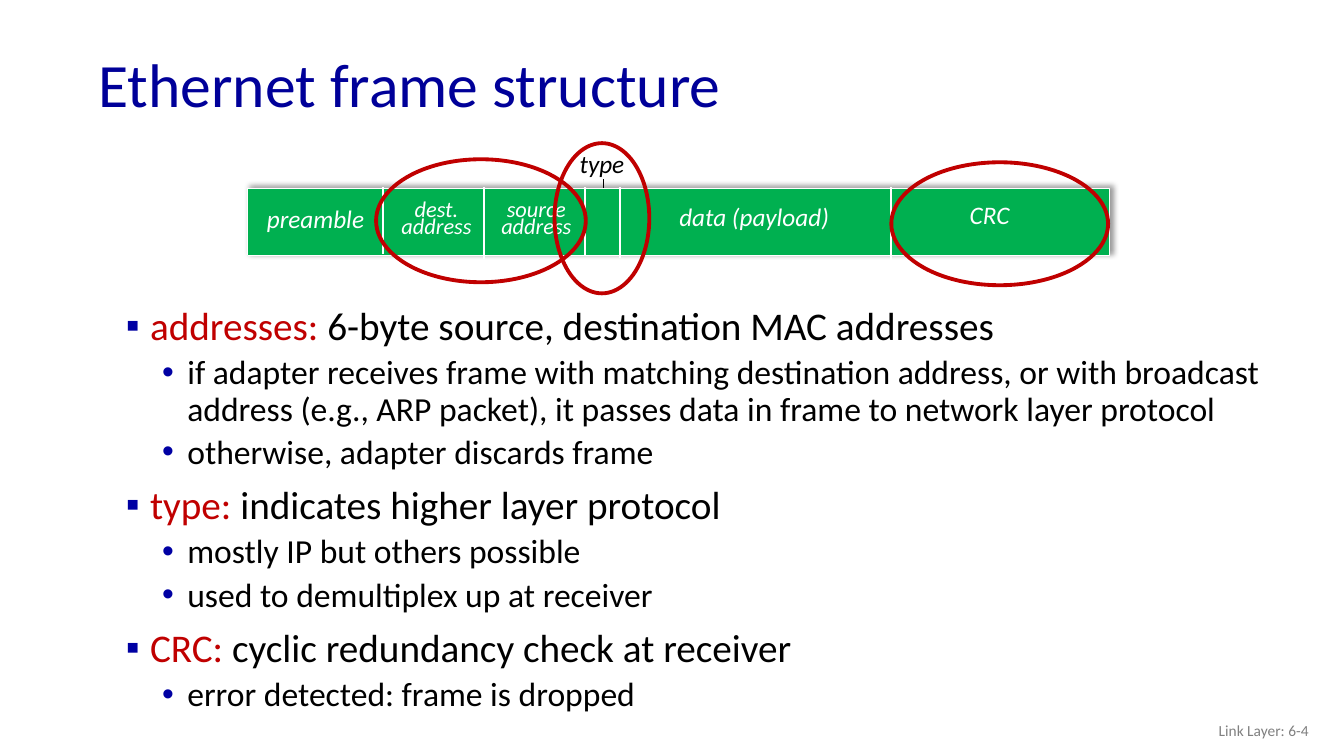
from lxml import etree
from pptx import Presentation
from pptx.dml.color import RGBColor
from pptx.enum.shapes import MSO_CONNECTOR, MSO_SHAPE
from pptx.enum.text import MSO_ANCHOR, MSO_AUTO_SIZE, PP_ALIGN
from pptx.oxml.ns import qn
from pptx.util import Inches, Pt

RECTANGLE, OVAL = MSO_SHAPE.RECTANGLE, MSO_SHAPE.OVAL
STRAIGHT = MSO_CONNECTOR.STRAIGHT
TOP, MIDDLE = MSO_ANCHOR.TOP, MSO_ANCHOR.MIDDLE
LEFT, CENTER, RIGHT = PP_ALIGN.LEFT, PP_ALIGN.CENTER, PP_ALIGN.RIGHT
GROW = MSO_AUTO_SIZE.SHAPE_TO_FIT_TEXT

NAVY = RGBColor(0x00, 0x00, 0x99)
BULLET_BLUE = RGBColor(0x00, 0x00, 0xA3)
RED = RGBColor(0xC0, 0x00, 0x00)
GREEN = RGBColor(0x00, 0xB0, 0x50)
GRAY = RGBColor(0x80, 0x80, 0x80)
WHITE = RGBColor(0xFF, 0xFF, 0xFF)
BLACK = RGBColor(0x00, 0x00, 0x00)

TOPICS = [
    ("addresses: ", "6-byte source, destination MAC addresses", [
        "if adapter receives frame with matching destination address, or with "
        "broadcast address (e.g., ARP packet), it passes data in frame to "
        "network layer protocol",
        "otherwise, adapter discards frame",
    ]),
    ("type: ", "indicates higher layer protocol", [
        "mostly IP but others possible",
        "used to demultiplex up at receiver",
    ]),
    ("CRC: ", "cyclic redundancy check at receiver", [
        "error detected: frame is dropped",
    ]),
]
FIELD_LABELS = [
    (["dest.", "address"], 16, (3.75, 1.99, 1.16, 0.4)),
    (["source", "address"], 16, (4.74, 1.99, 1.16, 0.4)),
    (["data (payload)"], 18, (6.54, 2.08, 1.88, 0.26)),
    (["CRC"], 18, (9.23, 2.06, 1.17, 0.26)),
    (["preamble"], 18, (2.4, 2.1, 1.46, 0.26)),
]
FIELD_BORDERS = [(3.8, 2.52), (4.8, 2.57), (5.8, 2.53), (6.15, 2.56), (8.84, 2.62)]
HIGHLIGHTS = [
    (3.73, 1.58, 2.08, 1.22),
    (8.84, 1.61, 2.15, 1.22),
    (5.5, 1.42, 0.94, 1.49),
]


class FrameSlide:
    font = "Calibri"

    def __init__(self, deck):
        self.slide = deck.slides.add_slide(deck.slide_layouts[6])

    def run(self, paragraph, words, size, color, italic=False):
        run = paragraph.add_run()
        run.text = words
        run.font.name = self.font
        run.font.size = Pt(size)
        run.font.italic = italic
        run.font.color.rgb = color

    def frame(self, box, anchor=TOP):
        frame = self.slide.shapes.add_textbox(*map(Inches, box)).text_frame
        frame.word_wrap = True
        frame.vertical_anchor = anchor
        return frame

    def text(self, lines, box, size, color, align=LEFT, anchor=TOP,
             spacing=None, italic=False):
        frame = self.frame(box, anchor)
        if italic:
            frame.auto_size = GROW
        for index, words in enumerate(lines):
            paragraph = frame.add_paragraph() if index else frame.paragraphs[0]
            paragraph.alignment = align
            paragraph.line_spacing = spacing
            self.run(paragraph, words, size, color, italic)

    def bullet(self, paragraph, level, symbol, margin, indent, before):
        paragraph.level = level
        paragraph.line_spacing = 0.9
        paragraph.space_before = Pt(before)
        properties = paragraph._p.get_or_add_pPr()
        properties.set("marL", str(Inches(margin)))
        properties.set("indent", str(Inches(indent)))
        bullet_color = etree.SubElement(properties, qn("a:buClr"))
        etree.SubElement(bullet_color, qn("a:srgbClr"), val=str(BULLET_BLUE))
        etree.SubElement(properties, qn("a:buFont"), typeface="Arial")
        etree.SubElement(properties, qn("a:buChar"), char=symbol)

    def outline(self, topics, box):
        frame = self.frame(box)
        for index, (term, meaning, details) in enumerate(topics):
            heading = frame.add_paragraph() if index else frame.paragraphs[0]
            self.bullet(heading, 0, "▪", 0.39, -0.24, 10)
            self.run(heading, term, 28, RED)
            self.run(heading, meaning, 28, BLACK)
            for words in details:
                detail = frame.add_paragraph()
                self.bullet(detail, 1, "•", 0.76, -0.25, 5)
                self.run(detail, words, 24, BLACK)

    def shape(self, kind, box, line, width, fill=None):
        shape = self.slide.shapes.add_shape(kind, *map(Inches, box))
        shape.shadow.inherit = False
        if fill is None:
            shape.fill.background()
        else:
            shape.fill.solid()
            shape.fill.fore_color.rgb = fill
        shape.line.color.rgb = line
        shape.line.width = Pt(width)
        return shape

    def cast_shadow(self, shape):
        effects = shape._element.spPr.find(qn("a:effectLst"))
        shadow = etree.SubElement(
            effects, qn("a:outerShdw"), blurRad=str(Pt(4)), dist=str(Pt(3)),
            dir=str(315 * 60000), algn="bl", rotWithShape="0")
        color = etree.SubElement(shadow, qn("a:srgbClr"), val=str(BLACK))
        etree.SubElement(color, qn("a:alpha"), val="40000")

    def vertical(self, x, top, bottom, color, width):
        line = self.slide.shapes.add_connector(
            STRAIGHT, Inches(x), Inches(top), Inches(x), Inches(bottom))
        line.line.color.rgb = color
        line.line.width = Pt(width)
        etree.SubElement(line._element.spPr, qn("a:effectLst"))


def main():
    deck = Presentation()
    deck.slide_width, deck.slide_height = Inches(13.33), Inches(7.5)
    page = FrameSlide(deck)

    page.text(["Ethernet frame structure"], (0.88, 0.38, 11.5, 0.98), 44, NAVY,
              anchor=MIDDLE, spacing=0.9)
    page.text(["Link Layer: 6-4"], (10.08, 7.05, 3, 0.4), 11, GRAY,
              align=RIGHT, anchor=MIDDLE)

    page.vertical(5.99, 1.78, 2.03, BLACK, 0.75)
    ethernet_frame = page.shape(RECTANGLE, (2.45, 1.87, 8.55, 0.67), WHITE, 0.75, GREEN)
    page.cast_shadow(ethernet_frame)
    for x, bottom in FIELD_BORDERS:
        page.vertical(x, 1.86, bottom, WHITE, 1.5)
    for lines, size, box in FIELD_LABELS:
        page.text(lines, box, size, WHITE, align=CENTER, spacing=Pt(12), italic=True)
    page.text(["type"], (5.65, 1.42, 1.05, 0.36), 18, BLACK, italic=True)

    page.outline(TOPICS, (1, 2.99, 12.33, 4.51))
    for box in HIGHLIGHTS:
        page.shape(OVAL, box, RED, 2.75)

    deck.save("out.pptx")


if __name__ == "__main__":
    main()
